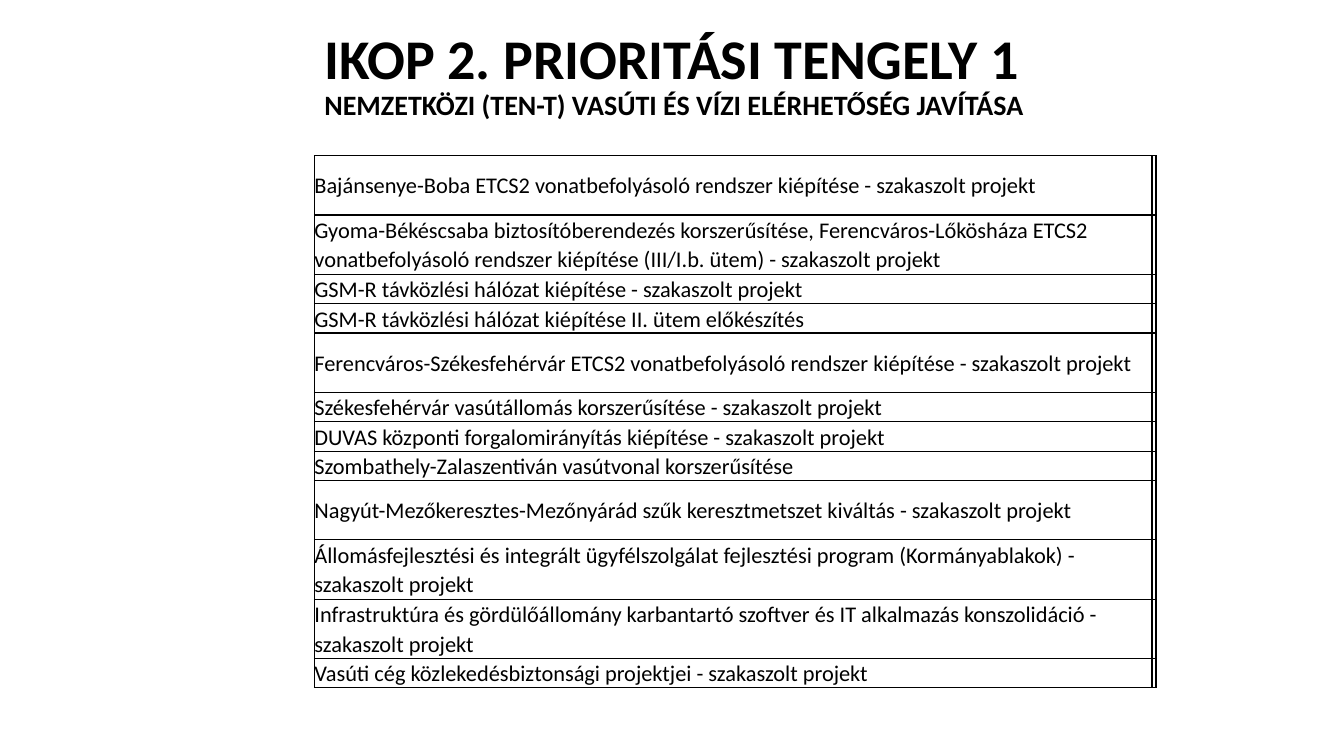
from lxml.etree import SubElement
from pptx import Presentation
from pptx.dml.color import RGBColor
from pptx.enum.text import MSO_ANCHOR
from pptx.oxml.ns import qn
from pptx.util import Pt

COLORS = {"text": "000000", "fill": "FFFFFF", "border": "000000"}
FONT = "Calibri"
TITLE_LINES = [
    ("IKOP 2. PRIORITÁSI TENGELY 1", 40),
    ("NEMZETKÖZI (TEN-T) VASÚTI ÉS VÍZI ELÉRHETŐSÉG JAVÍTÁSA", 20),
]
SINGLE, DOUBLE = 21, 42.4
PROJECTS = [
    ("Bajánsenye-Boba ETCS2 vonatbefolyásoló rendszer kiépítése - szakaszolt projekt", DOUBLE),
    ("Gyoma-Békéscsaba biztosítóberendezés korszerűsítése, Ferencváros-Lőkösháza ETCS2 "
     "vonatbefolyásoló rendszer kiépítése (III/I.b. ütem) - szakaszolt projekt", DOUBLE),
    ("GSM-R távközlési hálózat kiépítése - szakaszolt projekt", SINGLE),
    ("GSM-R távközlési hálózat kiépítése II. ütem előkészítés", SINGLE),
    ("Ferencváros-Székesfehérvár ETCS2 vonatbefolyásoló rendszer kiépítése - szakaszolt projekt",
     DOUBLE),
    ("Székesfehérvár vasútállomás korszerűsítése - szakaszolt projekt", SINGLE),
    ("DUVAS központi forgalomirányítás kiépítése - szakaszolt projekt", SINGLE),
    ("Szombathely-Zalaszentiván vasútvonal korszerűsítése", SINGLE),
    ("Nagyút-Mezőkeresztes-Mezőnyárád szűk keresztmetszet kiváltás - szakaszolt projekt", DOUBLE),
    ("Állomásfejlesztési és integrált ügyfélszolgálat fejlesztési program (Kormányablakok) - "
     "szakaszolt projekt", DOUBLE),
    ("Infrastruktúra és gördülőállomány karbantartó szoftver és IT alkalmazás konszolidáció - "
     "szakaszolt projekt", DOUBLE),
    ("Vasúti cég közlekedésbiztonsági projektjei - szakaszolt projekt", SINGLE),
]


def add_run(p, text, size, bold=False):
    r = p.add_run()
    r.text = text
    for name, value in {"name": FONT, "size": Pt(size), "bold": bold}.items():
        setattr(r.font, name, value)
    r.font.color.rgb = RGBColor.from_string(COLORS["text"])


def add_title(slide, left, top, width, height):
    tf = slide.shapes.add_textbox(Pt(left), Pt(top), Pt(width), Pt(height)).text_frame
    tf.word_wrap = True
    tf.vertical_anchor = MSO_ANCHOR.MIDDLE
    p = tf.paragraphs[0]
    p.line_spacing = 0.9
    for i, (text, size) in enumerate(TITLE_LINES):
        if i:
            p.add_line_break()
        add_run(p, text, size, bold=True)


def format_cell(cell):
    margins = ("margin_left", "margin_right", "margin_top", "margin_bottom")
    for name, value in {**dict.fromkeys(margins, 0),
                        "vertical_anchor": MSO_ANCHOR.MIDDLE}.items():
        setattr(cell, name, value)
    # Borders come before the fill in the cell properties
    tc_pr = cell._tc.get_or_add_tcPr()
    for side in ("a:lnL", "a:lnR", "a:lnT", "a:lnB"):
        ln = SubElement(tc_pr, qn(side), w=str(Pt(1)))
        SubElement(SubElement(ln, qn("a:solidFill")), qn("a:srgbClr"), val=COLORS["border"])
    cell.fill.solid()
    cell.fill.fore_color.rgb = RGBColor.from_string(COLORS["fill"])


def add_project_table(slide, left, top, width, narrow):
    height = sum(h for _, h in PROJECTS)
    table = slide.shapes.add_table(len(PROJECTS), 2, Pt(left), Pt(top),
                                   Pt(width), Pt(height)).table
    table.first_row = table.horz_banding = False
    for col, w in zip(table.columns, (width - narrow, narrow)):
        col.width = Pt(w)
    for row, (text, h) in zip(table.rows, PROJECTS):
        row.height = Pt(h)
        project, empty = row.cells
        format_cell(project)
        format_cell(empty)
        p = project.text_frame.paragraphs[0]
        p.line_spacing = 1.07
        add_run(p, text, 16)
        # Small type keeps the empty cell from stretching its row
        SubElement(empty.text_frame.paragraphs[0]._p, qn("a:endParaRPr"), sz="800")


def main():
    prs = Presentation()
    prs.slide_width, prs.slide_height = Pt(960), Pt(540)
    slide = prs.slides.add_slide(prs.slide_layouts[6])
    left, width = 224.6, 601.2
    add_title(slide, left, 9.4, width, 90)
    add_project_table(slide, left, 111.2, width, narrow=2.9)
    prs.save("out.pptx")


if __name__ == "__main__":
    main()
